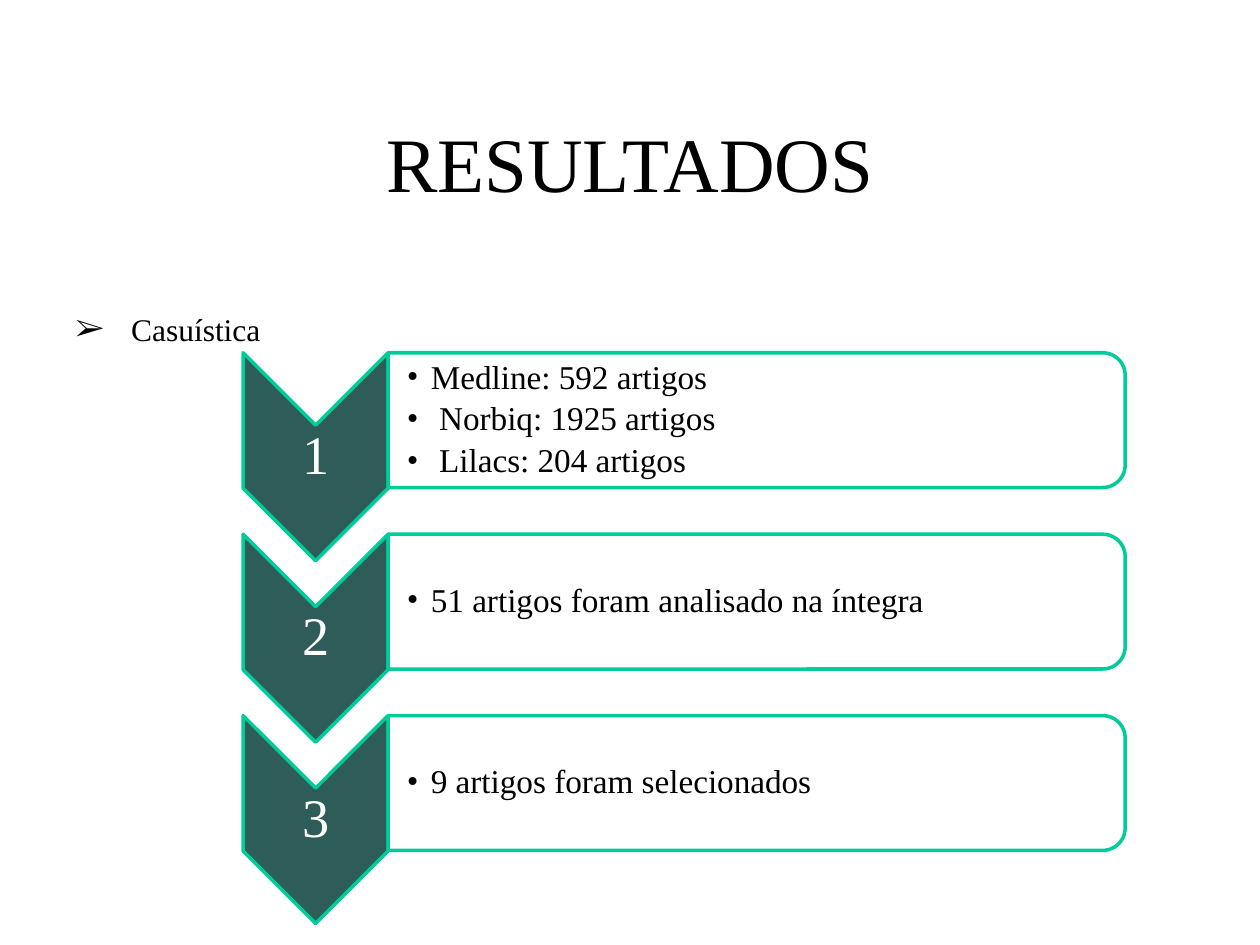
from lxml import etree
from pptx import Presentation
from pptx import util as u
from pptx.dml.color import RGBColor
from pptx.enum import shapes, text
from pptx.oxml import ns

THEME = {
    "font": "Times New Roman",
    "ink": RGBColor.from_string("000000"),
    "paper": RGBColor.from_string("FFFFFF"),
    "chevron": RGBColor.from_string("2E5C58"),
    "edge": RGBColor.from_string("00CC99"),
    "edge_width": u.Pt(2),
    "title": u.Pt(44),
    "topic": u.Pt(18),
    "number": u.Pt(31),
    "detail": u.Pt(19),
}
MIDDLE = text.MSO_ANCHOR.MIDDLE
CENTER = text.PP_ALIGN.CENTER

deck = Presentation()
deck.slide_width, deck.slide_height = u.Inches(10), u.Inches(7.5)
column, row = deck.slide_width / 100, deck.slide_height / 75
slide = deck.slides.add_slide(deck.slide_layouts[6])


def write(area, lines, size, color, frame_format, line_format, bullet=None, indent=0):
    left, top, width, height = area
    frame = slide.shapes.add_textbox(
        round(left * column), round(top * row), round(width * column), round(height * row)
    ).text_frame
    frame.word_wrap = True
    for name, value in frame_format.items():
        setattr(frame, name, value)
    for index, line in enumerate(lines):
        paragraph = frame.paragraphs[0] if index == 0 else frame.add_paragraph()
        for name, value in line_format.items():
            setattr(paragraph, name, value)
        if bullet:
            properties = paragraph._p.get_or_add_pPr()
            properties.set("marL", str(round(indent * column)))
            properties.set("indent", str(round(-indent * column)))
            etree.SubElement(properties, ns.qn("a:buFont")).set("typeface", THEME["font"])
            etree.SubElement(properties, ns.qn("a:buChar")).set("char", bullet)
        run = paragraph.add_run()
        run.text = line
        run.font.name, run.font.size = THEME["font"], size
        run.font.color.rgb = color


def draw_turned(kind, center, length, breadth, fill):
    x, y = center
    shape = slide.shapes.add_shape(
        kind, round((x - length / 2) * column), round((y - breadth / 2) * row),
        round(length * column), round(breadth * row)
    )
    shape.rotation = 90
    shape.shadow.inherit = False
    shape.fill.solid()
    shape.fill.fore_color.rgb = fill
    shape.line.color.rgb = THEME["edge"]
    shape.line.width = THEME["edge_width"]


write((7.5, 6.6, 85, 12.5), ["RESULTADOS"], THEME["title"], THEME["ink"],
      {"vertical_anchor": MIDDLE}, {"alignment": CENTER})
write((5, 24.1, 90, 4), [" Casuística"], THEME["topic"], THEME["ink"],
      {}, {"alignment": text.PP_ALIGN.JUSTIFY}, "➢", 3.8)

number_frame = {"vertical_anchor": MIDDLE} | dict.fromkeys(
    ("margin_left", "margin_top", "margin_right", "margin_bottom"), u.Inches(0.02))
detail_frame = {"vertical_anchor": MIDDLE, "margin_left": u.Inches(0.15)} | dict.fromkeys(
    ("margin_top", "margin_right", "margin_bottom"), u.Inches(0.01))
number_line = {"alignment": CENTER, "line_spacing": 0.9, "space_after": u.Pt(11)}
detail_line = {"line_spacing": 0.9, "space_after": u.Pt(3.3)}

steps = [
    ["Medline: 592 artigos", " Norbiq: 1925 artigos", " Lilacs: 204 artigos"],
    ["51 artigos foram analisado na íntegra"],
    ["9 artigos foram selecionados"],
]
first_top, pitch = 28, 14.4
chevron_left, chevron_width, chevron_height = 19.3, 11.5, 16.5
panel_left, panel_width, panel_height = chevron_left + chevron_width, 58.5, 10.7

for index, details in enumerate(steps):
    top = first_top + index * pitch
    draw_turned(shapes.MSO_SHAPE.CHEVRON,
                (chevron_left + chevron_width / 2, top + chevron_height / 2),
                chevron_height, chevron_width, THEME["chevron"])
    write((chevron_left, top + 5.8, chevron_width, 4.9), [str(index + 1)],
          THEME["number"], THEME["paper"], number_frame, number_line)
    draw_turned(shapes.MSO_SHAPE.ROUND_2_SAME_RECTANGLE,
                (panel_left + panel_width / 2, top + panel_height / 2),
                panel_height, panel_width, THEME["paper"])
    write((panel_left, top + 0.5, panel_width - 0.5, panel_height - 1), details,
          THEME["detail"], THEME["ink"], detail_frame, detail_line, "•", 1.9)

deck.save("out.pptx")
